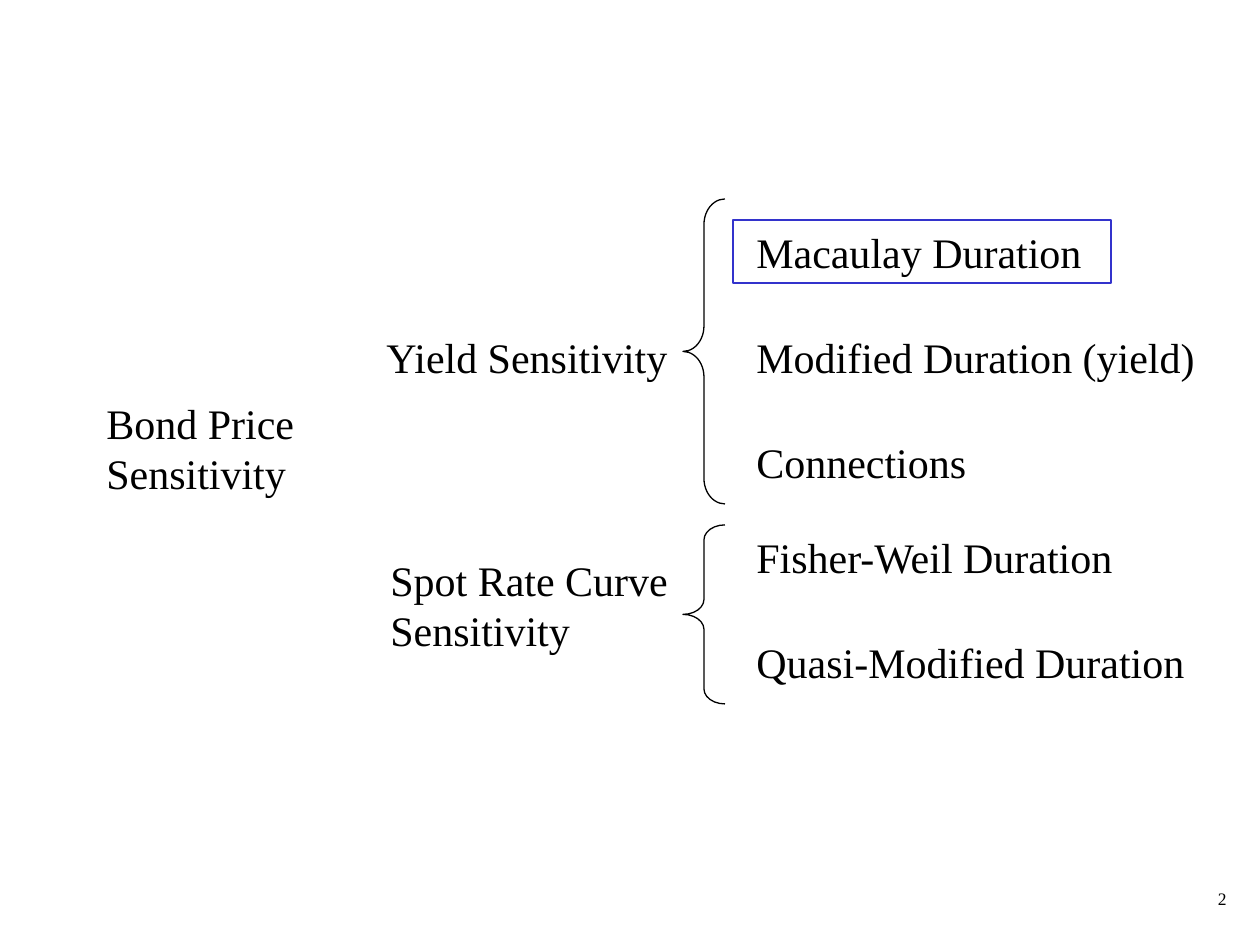
from pptx import Presentation
from pptx import util as u
from pptx.dml.color import RGBColor
from pptx.enum import shapes, text

PX = u.Inches(1) // 126
COLORS = {"ink": "000000", "highlight": "3333CC"}
FONT = "Times New Roman"
ROW_HEIGHT = 63


def px(*lengths):
    return [length * PX for length in lengths]


def add_text(slide, content, box, size=24, align=text.PP_ALIGN.LEFT, wrap=False):
    shape = slide.shapes.add_textbox(*px(*box))
    frame = shape.text_frame
    frame.word_wrap = wrap
    if not wrap:
        frame.auto_size = text.MSO_AUTO_SIZE.SHAPE_TO_FIT_TEXT
    paragraph = frame.paragraphs[0]
    paragraph.text = content
    paragraph.alignment = align
    for run in paragraph.runs:
        run.font.name = FONT
        run.font.size = u.Pt(size)
        run.font.color.rgb = RGBColor.from_string(COLORS["ink"])


def add_outline(slide, kind, box, color):
    shape = slide.shapes.add_shape(kind, *px(*box))
    shape.shadow.inherit = False
    shape.fill.background()
    shape.line.color.rgb = RGBColor.from_string(COLORS[color])
    shape.line.width = u.Pt(0.75)
    return shape


def add_branch(slide, box, label, label_box, measures, first_row):
    left, top, width, height = box
    x, y, label_width, label_height = label_box
    add_text(slide, label, (left + x, top + y, label_width, label_height))
    brace = add_outline(slide, shapes.MSO_SHAPE.LEFT_BRACE,
                        (left + 308, top, 42, height), "ink")
    brace.adjustments[0] = height / 12 / 42
    for row, (measure, measure_width) in enumerate(measures):
        add_text(slide, measure,
                 (left + 369, top + first_row + row * 105, measure_width, ROW_HEIGHT))


def add_highlight(slide, box):
    add_outline(slide, shapes.MSO_SHAPE.RECTANGLE, box, "highlight")


def main():
    presentation = Presentation()
    presentation.slide_width, presentation.slide_height = px(1260, 945)
    slide = presentation.slides.add_slide(presentation.slide_layouts[6])
    add_text(slide, "Bond Price\vSensitivity", (94, 391, 226, 113))
    add_branch(slide, (375, 199, 837, 305), "Yield Sensitivity", (-1, 126, 312, ROW_HEIGHT),
               [("Macaulay Duration", 354), ("Modified Duration (yield)", 468),
                ("Connections", 240)], 21)
    add_highlight(slide, (733, 220, 378, ROW_HEIGHT))
    add_branch(slide, (375, 525, 837, 179), "Spot Rate Curve\vSensitivity", (3, 23, 316, 113),
               [("Fisher-Weil Duration", 390), ("Quasi-Modified Duration", 458)], 0)
    add_text(slide, "2", (977, 882, 262, 42), size=10,
             align=text.PP_ALIGN.RIGHT, wrap=True)
    presentation.save("out.pptx")


if __name__ == "__main__":
    main()
